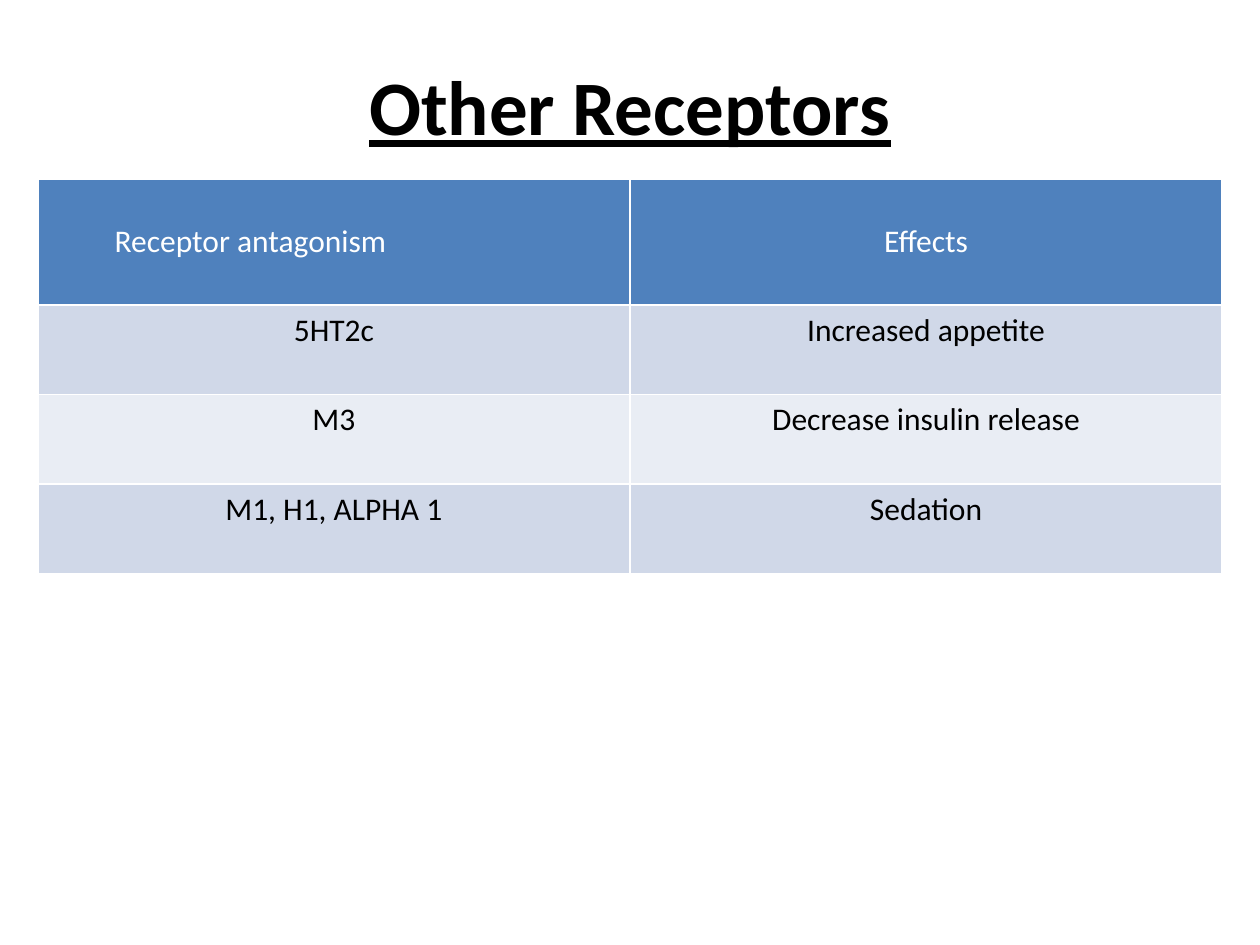
from lxml import etree
from pptx import Presentation
from pptx.dml.color import RGBColor
from pptx.enum import text
from pptx.oxml import ns
from pptx.util import Inches, Pt

# Content
TITLE = "Other Receptors"
ROWS = [
    ("Receptor antagonism", "Effects"),
    ("5HT2c", "Increased appetite"),
    ("M3", "Decrease insulin release"),
    ("M1, H1, ALPHA 1", "Sedation"),
]

# Format
COLORS = {"black": "000000", "white": "FFFFFF", "header": "4F81BD",
          "odd": "D0D8E8", "even": "E9EDF4"}
FONT = "Calibri"
LEFT, WIDTH = 0.3, 9.4
TITLE_TOP, TITLE_HEIGHT = 0.25, 1.17
TABLE_TOP = TITLE_TOP + TITLE_HEIGHT
HEADER_HEIGHT, ROW_HEIGHT = 1, 0.71
HEADER_INDENT = 0.61


def write(frame, content, size=18, color="black", bold=False, underline=False,
          align=text.PP_ALIGN.CENTER):
    paragraph = frame.paragraphs[0]
    paragraph.alignment = align
    run = paragraph.add_run()
    run.text = content
    font = run.font
    font.name, font.size = FONT, Pt(size)
    font.bold, font.underline = bold, underline
    font.color.rgb = RGBColor.from_string(COLORS[color])


def add_borders(cell, color="white", width=1):
    properties = cell._tc.get_or_add_tcPr()
    for position, side in enumerate(("lnL", "lnR", "lnT", "lnB")):
        line = etree.Element(ns.qn(f"a:{side}"), w=str(Pt(width)))
        fill = etree.SubElement(line, ns.qn("a:solidFill"))
        etree.SubElement(fill, ns.qn("a:srgbClr"), val=COLORS[color])
        properties.insert(position, line)


presentation = Presentation()
presentation.slide_width, presentation.slide_height = Inches(10), Inches(7.5)
slide = presentation.slides.add_slide(presentation.slide_layouts[6])

# Title
title = slide.shapes.add_textbox(Inches(LEFT), Inches(TITLE_TOP),
                                 Inches(WIDTH), Inches(TITLE_HEIGHT))
title.text_frame.word_wrap = True
title.text_frame.vertical_anchor = text.MSO_ANCHOR.MIDDLE
write(title.text_frame, TITLE, size=44, bold=True, underline=True)

# Receptor table
heights = [HEADER_HEIGHT] + [ROW_HEIGHT] * (len(ROWS) - 1)
table = slide.shapes.add_table(
    len(ROWS), len(ROWS[0]), Inches(LEFT), Inches(TABLE_TOP),
    Inches(WIDTH), Inches(sum(heights))).table
for row_index, labels in enumerate(ROWS):
    is_header = row_index == 0
    table.rows[row_index].height = Inches(heights[row_index])
    fill = "header" if is_header else "odd" if row_index % 2 else "even"
    for column_index, label in enumerate(labels):
        cell = table.cell(row_index, column_index)
        cell.fill.solid()
        cell.fill.fore_color.rgb = RGBColor.from_string(COLORS[fill])
        add_borders(cell)
        align = text.PP_ALIGN.CENTER
        if is_header:
            cell.vertical_anchor = text.MSO_ANCHOR.MIDDLE
            if column_index == 0:
                align = text.PP_ALIGN.LEFT
                cell.margin_left = Inches(HEADER_INDENT)
        write(cell.text_frame, label, align=align,
              color="white" if is_header else "black")

presentation.save("out.pptx")
